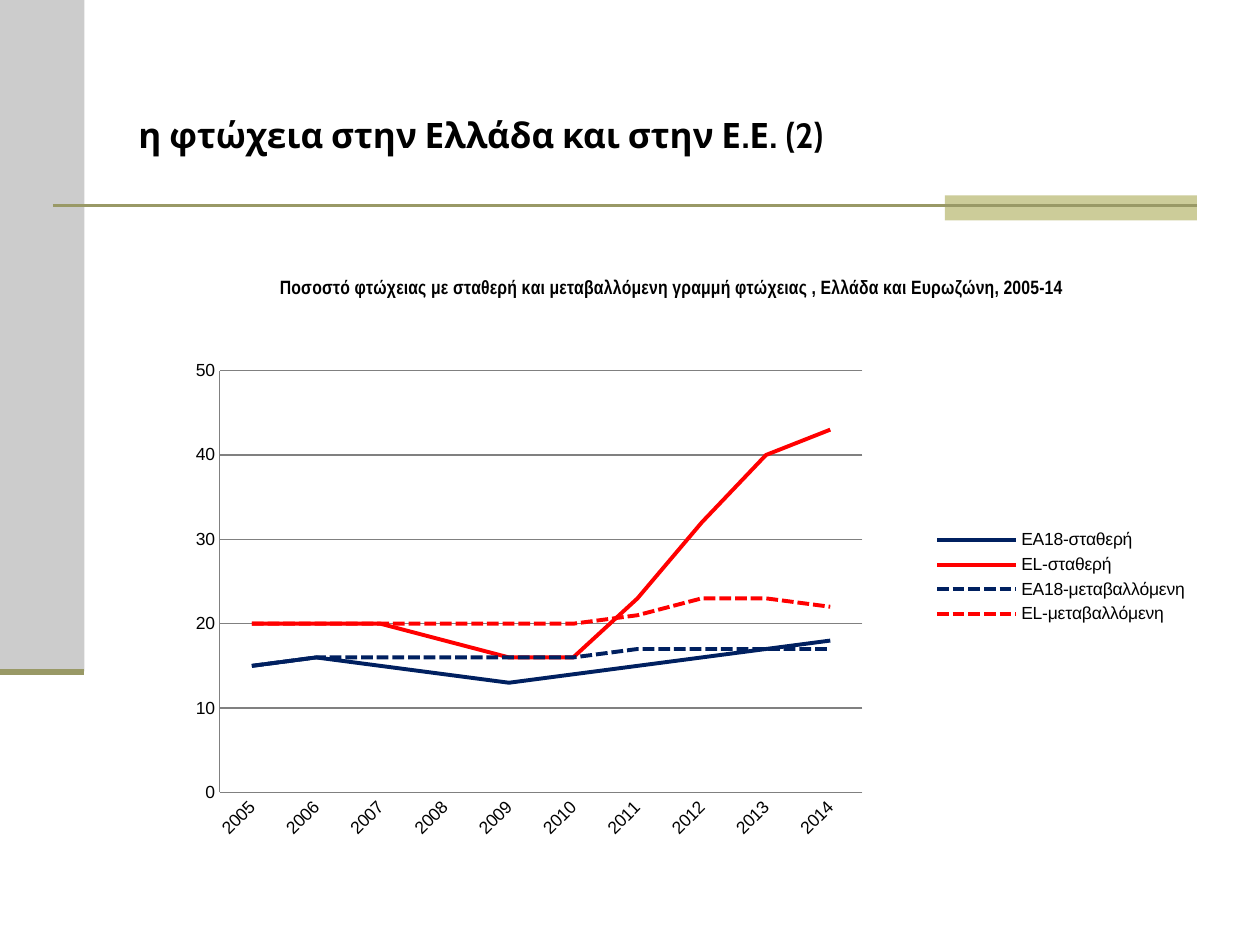
from lxml import etree
from pptx import Presentation
from pptx.chart.data import CategoryChartData
from pptx.dml.color import RGBColor
from pptx.enum.chart import XL_CHART_TYPE as ChartType
from pptx.enum.chart import XL_LEGEND_POSITION as LegendPosition
from pptx.enum.chart import XL_TICK_MARK as TickMark
from pptx.enum.dml import MSO_LINE as Dash
from pptx.enum.shapes import MSO_CONNECTOR as Connector
from pptx.enum.shapes import MSO_SHAPE as Shape
from pptx.enum.text import MSO_ANCHOR as Anchor
from pptx.oxml.ns import qn
from pptx.util import Inches, Pt

BLACK = RGBColor(0x00, 0x00, 0x00)
GREY = RGBColor(0xCC, 0xCC, 0xCC)
AXIS_GREY = RGBColor(0x80, 0x80, 0x80)
SAND = RGBColor(0xCC, 0xCC, 0x99)
OLIVE = RGBColor(0x99, 0x99, 0x66)
NAVY = RGBColor(0x00, 0x20, 0x60)
RED = RGBColor(0xFF, 0x00, 0x00)

HEADING = "η φτώχεια στην Ελλάδα και στην Ε.Ε. (2)"
CHART_TITLE = ("Ποσοστό φτώχειας με σταθερή και μεταβαλλόμενη γραμμή φτώχειας , "
               "Ελλάδα και Ευρωζώνη, 2005-14")
YEARS = [str(year) for year in range(2005, 2015)]
POVERTY_RATES = [
    ("EA18-σταθερή", NAVY, Dash.SOLID, (15, 16, 15, 14, 13, 14, 15, 16, 17, 18)),
    ("EL-σταθερή", RED, Dash.SOLID, (20, 20, 20, 18, 16, 16, 23, 32, 40, 43)),
    ("EA18-μεταβαλλόμενη", NAVY, Dash.SQUARE_DOT, (15, 16, 16, 16, 16, 16, 17, 17, 17, 17)),
    ("EL-μεταβαλλόμενη", RED, Dash.SQUARE_DOT, (20, 20, 20, 20, 20, 20, 21, 23, 23, 22)),
]
PLOT_LAYOUT = [("layoutTarget", "inner"), ("xMode", "edge"), ("yMode", "edge"),
               ("x", 0.072), ("y", 0.18), ("w", 0.608), ("h", 0.654)]
BLOCKS = [((0, 0, 0.67, 5.33), GREY), ((7.5, 1.55, 2, 0.2), SAND)]
RULES = [((0.42, 1.63, 9.5, 1.63), 1.5), ((0, 5.33, 0.67, 5.33), 3.5)]


def write_text(frame, text, font, size, color=BLACK, bold=True):
    run = frame.paragraphs[0].add_run()
    run.text = text
    run.font.name = font
    run.font.size = Pt(size)
    run.font.bold = bold
    run.font.color.rgb = color


def add_block(slide, box, color):
    block = slide.shapes.add_shape(Shape.RECTANGLE, *map(Inches, box))
    block.shadow.inherit = False
    block.fill.solid()
    block.fill.fore_color.rgb = color
    block.line.fill.background()


def add_rule(slide, ends, width):
    rule = slide.shapes.add_connector(Connector.STRAIGHT, *map(Inches, ends))
    rule.line.color.rgb = OLIVE
    rule.line.width = Pt(width)
    etree.SubElement(rule._element.spPr, qn("a:effectLst"))


def add_heading(slide):
    heading = slide.shapes.add_textbox(Inches(1), Inches(0.58), Inches(8.5), Inches(0.97))
    frame = heading.text_frame
    frame.word_wrap = True
    frame.vertical_anchor = Anchor.MIDDLE
    write_text(frame, HEADING, font="Cabin", size=20)


def place_plot(chart):
    plot_area = chart._chartSpace.chart.plotArea
    for automatic in plot_area.findall(qn("c:layout")):
        plot_area.remove(automatic)
    layout = etree.Element(qn("c:layout"))
    manual = etree.SubElement(layout, qn("c:manualLayout"))
    for tag, value in PLOT_LAYOUT:
        etree.SubElement(manual, qn(f"c:{tag}")).set("val", str(value))
    plot_area.insert(0, layout)


def format_axes(chart):
    years, rates = chart.category_axis, chart.value_axis
    for axis in (years, rates):
        axis.major_tick_mark = axis.minor_tick_mark = TickMark.NONE
        axis.format.line.color.rgb = AXIS_GREY
        axis.tick_labels.font.size = Pt(10)
    years.has_major_gridlines = False
    years._element.txPr.find(qn("a:bodyPr")).set("rot", "-2700000")
    rates.minimum_scale, rates.maximum_scale, rates.major_unit = 0, 50, 10
    rates.has_major_gridlines = True
    rates.major_gridlines.format.line.color.rgb = AXIS_GREY


def add_poverty_chart(slide):
    data = CategoryChartData(number_format="0")
    data.categories = YEARS
    for name, _, _, rates in POVERTY_RATES:
        data.add_series(name, rates)
    chart = slide.shapes.add_chart(ChartType.LINE, Inches(1.14), Inches(2.02),
                                   Inches(8.39), Inches(5.12), data).chart
    chart.font.name = "Arial"
    chart.font.size = Pt(10)
    chart.font.color.rgb = BLACK
    chart.has_title = True
    write_text(chart.chart_title.text_frame, CHART_TITLE, font="Arial Narrow", size=11)
    chart.chart_title.include_in_layout = False
    chart.has_legend = True
    chart.legend.position = LegendPosition.RIGHT
    chart.legend.include_in_layout = False
    chart.plots[0].vary_by_categories = False
    for series, (_, color, dash, _) in zip(chart.plots[0].series, POVERTY_RATES):
        series.smooth = False
        series.format.line.color.rgb = color
        series.format.line.width = Pt(2.25)
        series.format.line.dash_style = dash
    format_axes(chart)
    place_plot(chart)


def main():
    deck = Presentation()
    deck.slide_width, deck.slide_height = Inches(10), Inches(7.5)
    slide = deck.slides.add_slide(deck.slide_layouts[6])
    for box, color in BLOCKS:
        add_block(slide, box, color)
    for ends, width in RULES:
        add_rule(slide, ends, width)
    add_heading(slide)
    add_poverty_chart(slide)
    deck.save("out.pptx")


if __name__ == "__main__":
    main()
